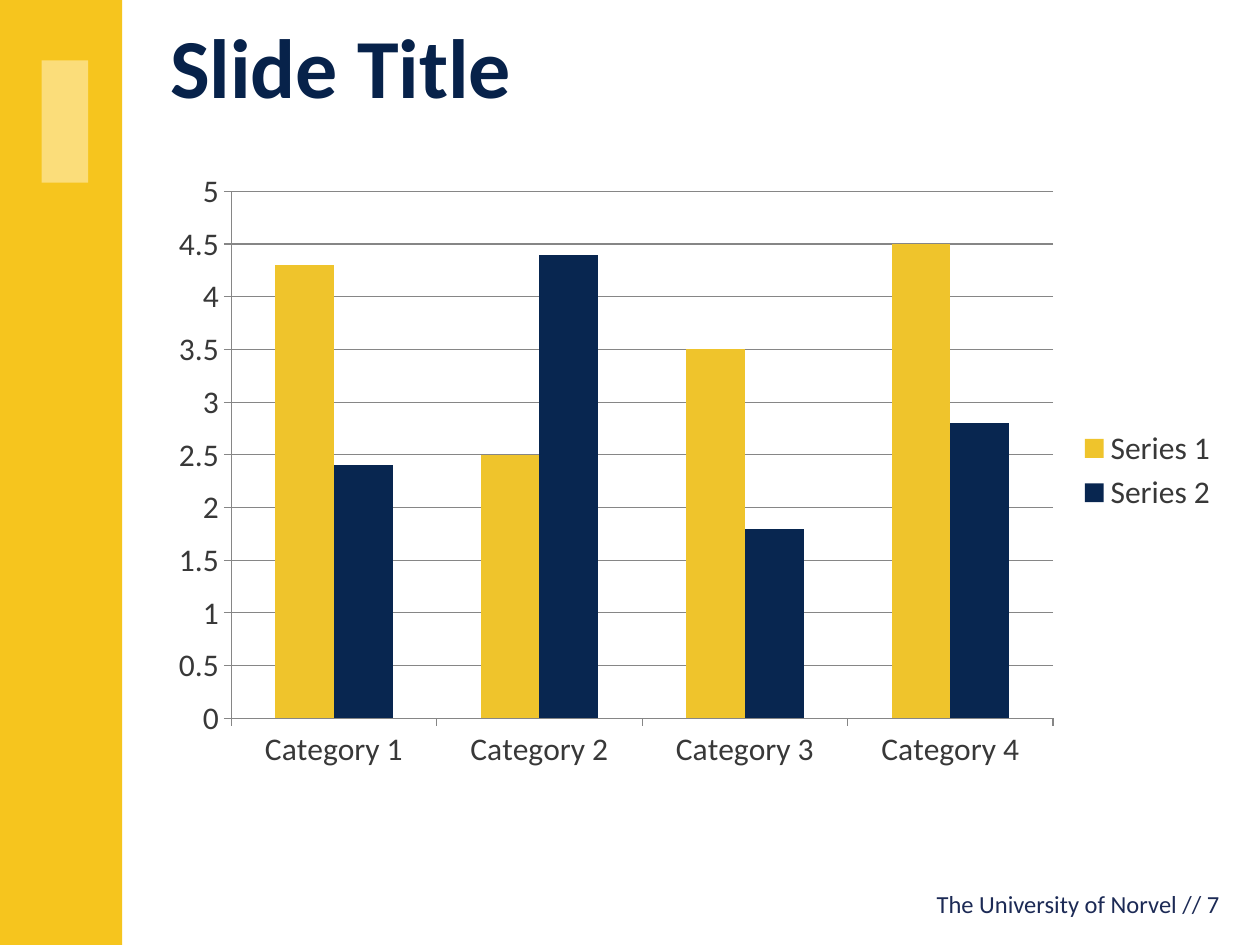
from dataclasses import dataclass

from pptx import Presentation
from pptx.chart.data import CategoryChartData
from pptx.dml.color import RGBColor
from pptx.enum.chart import XL_CHART_TYPE, XL_LEGEND_POSITION, XL_TICK_MARK
from pptx.enum.shapes import MSO_SHAPE
from pptx.enum.text import MSO_ANCHOR, MSO_AUTO_SIZE, PP_ALIGN
from pptx.util import Inches, Pt

COLUMNS = XL_CHART_TYPE.COLUMN_CLUSTERED
LEGEND_RIGHT = XL_LEGEND_POSITION.RIGHT
OUTSIDE = XL_TICK_MARK.OUTSIDE
RECT = MSO_SHAPE.RECTANGLE
TOP, MIDDLE = MSO_ANCHOR.TOP, MSO_ANCHOR.MIDDLE
NO_FIT = MSO_AUTO_SIZE.NONE
TEXT_LEFT, TEXT_RIGHT = PP_ALIGN.LEFT, PP_ALIGN.RIGHT

GOLD = RGBColor(0xF6, 0xC5, 0x1E)
PALE = RGBColor(0xFB, 0xDD, 0x7A)
NAVY = RGBColor(0x07, 0x22, 0x4A)
INK = RGBColor(0x1C, 0x2A, 0x55)
GREY = RGBColor(0x38, 0x38, 0x38)
RULE = RGBColor(0x86, 0x86, 0x86)
WHITE = RGBColor(0xFF, 0xFF, 0xFF)
FONT = "Calibri"
LEFT, WIDTH = Inches(1.25), Inches(8.52)


@dataclass
class Block:
    left: float
    top: float
    width: float
    height: float
    color: RGBColor


@dataclass
class Series:
    name: str
    values: tuple[float, ...]
    color: RGBColor


# Side bar and the plain mark on it
BLOCKS = [
    Block(0, 0, 0.97, 7.5, GOLD),
    Block(0.33, 0.48, 0.37, 0.97, PALE),
]
SERIES = [
    Series("Series 1", (4.3, 2.5, 3.5, 4.5), RGBColor(0xEF, 0xC4, 0x2C)),
    Series("Series 2", (2.4, 4.4, 1.8, 2.8), RGBColor(0x08, 0x26, 0x50)),
]


def style(font, size: float, color: RGBColor, bold: bool = False) -> None:
    font.name, font.size, font.bold = FONT, Pt(size), bold
    font.color.rgb = color


def write(shape, text: str, size: float, color: RGBColor, align: PP_ALIGN,
          anchor: MSO_ANCHOR, bold: bool = False) -> None:
    frame = shape.text_frame
    frame.text = text
    frame.word_wrap = True
    frame.auto_size = NO_FIT
    frame.vertical_anchor = anchor
    line = frame.paragraphs[0]
    line.alignment = align
    style(line.runs[0].font, size, color, bold)


def add_block(slide, block: Block) -> None:
    shape = slide.shapes.add_shape(RECT, Inches(block.left), Inches(block.top),
                                   Inches(block.width), Inches(block.height))
    shape.shadow.inherit = False
    shape.fill.solid()
    shape.fill.fore_color.rgb = block.color
    shape.line.fill.background()


def add_title(slide) -> None:
    title = slide.shapes.title
    title.left, title.top = LEFT, Inches(0.03)
    title.width, title.height = WIDTH, Inches(0.97)
    title.line.color.rgb = WHITE
    title.line.width = Pt(0.75)
    write(title, "Slide Title", 48, NAVY, TEXT_LEFT, TOP, True)
    title.text_frame.paragraphs[0].line_spacing = Pt(60)


def add_columns(slide) -> None:
    data = CategoryChartData()
    data.categories = [f"Category {n}" for n in range(1, 5)]
    for item in SERIES:
        data.add_series(item.name, item.values)
    chart = slide.shapes.add_chart(COLUMNS, LEFT, Inches(1.27), WIDTH, Inches(4.93), data).chart
    style(chart.font, 18, GREY)
    chart.has_title = False
    chart.has_legend = True
    chart.legend.position = LEGEND_RIGHT
    chart.legend.include_in_layout = False
    # Axes and grid
    grid = chart.value_axis
    grid.has_major_gridlines = True
    for axis in (chart.category_axis, grid):
        axis.major_tick_mark = OUTSIDE
    for part in (chart.category_axis, grid, grid.major_gridlines):
        part.format.line.color.rgb = RULE
        part.format.line.width = Pt(0.75)
    # Columns
    plot = chart.plots[0]
    plot.gap_width, plot.overlap = 150, 0
    plot.vary_by_categories = False
    for item, drawn in zip(SERIES, plot.series):
        drawn.format.fill.solid()
        drawn.format.fill.fore_color.rgb = item.color


def main() -> None:
    deck = Presentation()
    deck.slide_width, deck.slide_height = Inches(10), Inches(7.5)
    slide = deck.slides.add_slide(deck.slide_layouts[5])
    for block in BLOCKS:
        add_block(slide, block)
    add_title(slide)
    foot = slide.shapes.add_textbox(Inches(4.91), Inches(6.97), Inches(4.87), Inches(0.4))
    write(foot, "The University of Norvel // 7", 14, INK, TEXT_RIGHT, MIDDLE)
    add_columns(slide)
    deck.save("out.pptx")


if __name__ == "__main__":
    main()
